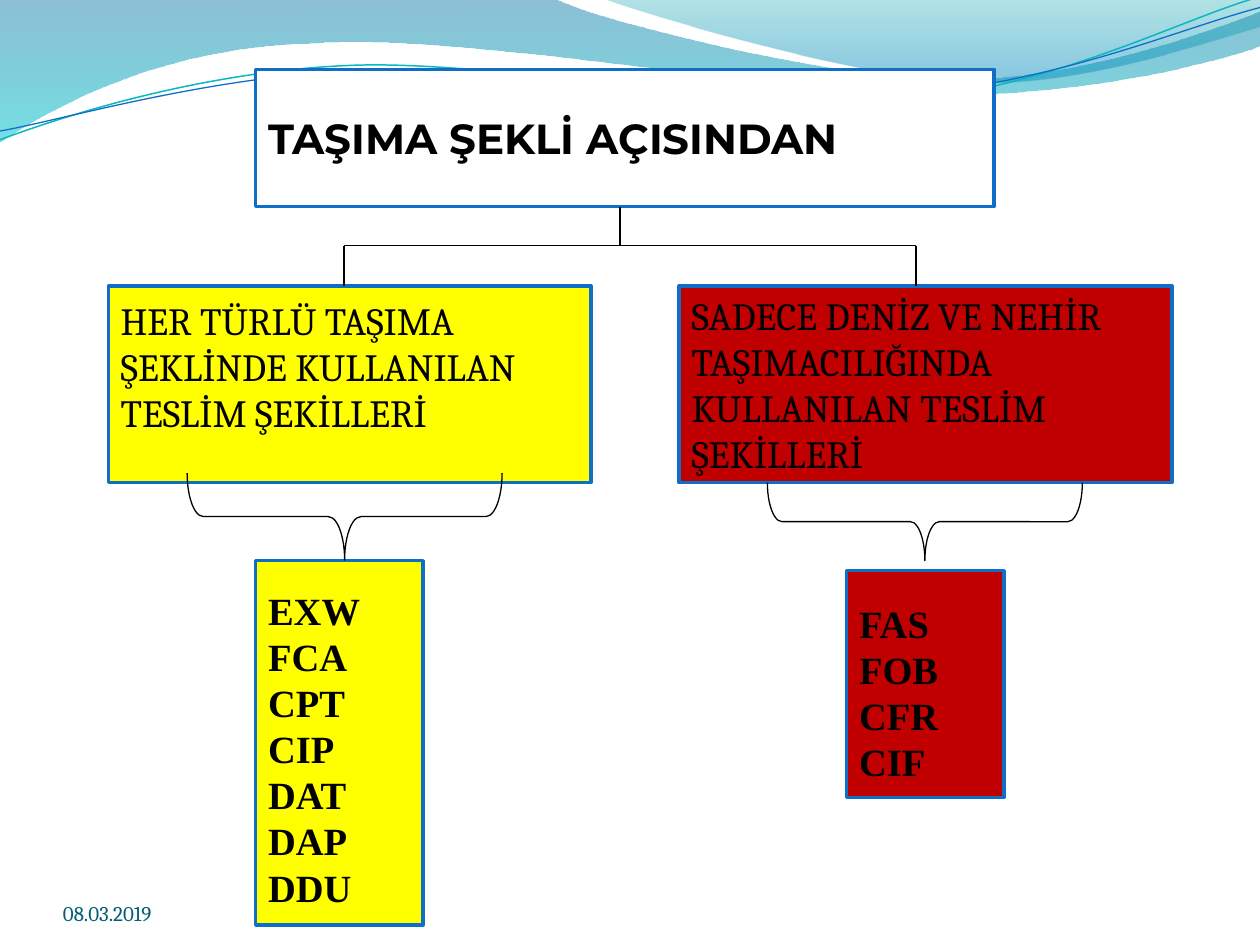
from dataclasses import dataclass

from lxml import etree
from pptx import Presentation
from pptx import util as u
from pptx.dml.color import RGBColor
from pptx.enum import shapes, text
from pptx.oxml import parse_xml
from pptx.oxml.ns import qn

COLS, ROWS = 100, 75  # grid of the slide, square cells
CELL = u.Inches(0.1)
NS = "http://schemas.openxmlformats.org/drawingml/2006/main"


@dataclass(frozen=True)
class Theme:
    ink: str = "000000"
    border: str = "0F6FC6"
    white: str = "FFFFFF"
    yellow: str = "FFFF00"
    red: str = "C00000"
    teal: str = "0AB8BF"
    date: str = "045D75"
    title_size: float = 24
    body_size: float = 22
    date_size: float = 12
    title_font: str = "Montserrat"
    body_font: str = "Cambria"
    code_font: str = "Times New Roman"
    border_width: float = 2
    hairline: float = 0.75


T = Theme()


@dataclass(frozen=True)
class Area:
    col: float
    row: float
    cols: float
    rows: float

    def emu(self) -> tuple:
        return tuple(cells(v) for v in (self.col, self.row, self.cols, self.rows))


@dataclass(frozen=True)
class Box:
    area: Area
    fill: str
    lines: tuple
    font: str
    size: float = T.body_size
    bold: bool = False
    top: float | None = None  # rows above the text; None centres it
    pitch: float | None = None  # line pitch in points


@dataclass(frozen=True)
class Wave:
    start: tuple
    curves: tuple  # each: two control points and an end point, or just an end point
    stops: tuple = ()  # position, colour, opacity in percent
    line: str = ""
    width: float = T.hairline


def cells(n: float) -> int:
    return round(n * CELL)


def write(tf, lines: tuple, *, font: str, size: float, color: str,
          bold: bool = False, pitch: float | None = None) -> None:
    tf.word_wrap = True
    for i, line in enumerate(lines):
        p = tf.add_paragraph() if i else tf.paragraphs[0]
        p.alignment = text.PP_ALIGN.LEFT
        if pitch:
            p.line_spacing = u.Pt(pitch)
        r = p.add_run()
        r.text = line
        r.font.name, r.font.size, r.font.bold = font, u.Pt(size), bold
        r.font.color.rgb = RGBColor.from_string(color)


def set_line(line, color: str, width: float) -> None:
    line.color.rgb = RGBColor.from_string(color)
    line.width = u.Pt(width)


def draw_box(sp, box: Box) -> None:
    s = sp.add_shape(shapes.MSO_SHAPE.RECTANGLE, *box.area.emu())
    s.shadow.inherit = False
    s.fill.solid()
    s.fill.fore_color.rgb = RGBColor.from_string(box.fill)
    set_line(s.line, T.border, T.border_width)
    tf = s.text_frame
    tf.vertical_anchor = text.MSO_ANCHOR.MIDDLE
    if box.top is not None:
        tf.vertical_anchor = text.MSO_ANCHOR.TOP
        tf.margin_top = cells(box.top)
    write(tf, box.lines, font=box.font, size=box.size, color=T.ink,
          bold=box.bold, pitch=box.pitch)


def draw_line(sp, x1: float, y1: float, x2: float, y2: float) -> None:
    c = sp.add_connector(shapes.MSO_CONNECTOR.STRAIGHT,
                         cells(x1), cells(y1), cells(x2), cells(y2))
    set_line(c.line, T.ink, T.hairline)
    etree.SubElement(c._element.spPr, qn("a:effectLst"))


def draw_brace(sp, area: Area, bend: float) -> None:
    s = sp.add_shape(shapes.MSO_SHAPE.RIGHT_BRACE, *area.emu())
    s.rotation = 90
    s.adjustments[0], s.adjustments[1] = bend, 0.5
    s.shadow.inherit = False
    s.fill.background()
    set_line(s.line, T.ink, T.hairline)


def bend_segments(spPr, curves: tuple) -> None:
    """Join each three straight segments of a curve into one cubic segment."""
    segments = iter(list(spPr.iter(qn("a:lnTo"))))
    for curve in curves:
        parts = [next(segments) for _ in curve]
        if len(parts) == 3:
            cubic = etree.Element(qn("a:cubicBezTo"))
            parts[0].addprevious(cubic)
            for part in parts:
                cubic.append(part[0])
                part.getparent().remove(part)


def draw_wave(sp, wave: Wave) -> None:
    points = [(cells(x), cells(y)) for curve in wave.curves for x, y in curve]
    fb = sp.build_freeform(*map(cells, wave.start))
    fb.add_line_segments(points, close=bool(wave.stops))
    s = fb.convert_to_shape()
    spPr = s._element.spPr
    bend_segments(spPr, wave.curves)
    s.shadow.inherit = False
    if wave.line:
        s.fill.background()
        set_line(s.line, wave.line, wave.width)
        return
    s.line.fill.background()
    s.fill.gradient()
    stops = "".join(
        f'<a:gs pos="{pos * 1000}"><a:srgbClr val="{color}">'
        f'<a:alpha val="{alpha * 1000}"/></a:srgbClr></a:gs>'
        for pos, color, alpha in wave.stops)
    spPr.replace(spPr.find(qn("a:gradFill")), parse_xml(
        f'<a:gradFill xmlns:a="{NS}" rotWithShape="1"><a:gsLst>{stops}</a:gsLst>'
        '<a:lin ang="5400000" scaled="0"/></a:gradFill>'))


WAVES = (
    Wave((0, 0), (((44, -0.1),),
                  ((47.6, 1.7), (66.4, 6.3), (75.8, 6.3)),
                  ((85.3, 6.3), (95.8, 2.6), (100, 0.9)),
                  ((100.1, 3.6),),
                  ((98.3, 4.4), (87, 7.6), (74.6, 7.5)),
                  ((62.2, 7.5), (38.2, 2.8), (25.7, 3.4)),
                  ((12.9, 3.6), (4.6, 8.3), (-0.1, 11.3))),
         stops=((0, "0074A1", 45), (100, "00C6CF", 55))),
    Wave((47.9, -0.1), (((50.9, 1.1), (68.2, 6.2), (76.9, 6.5)),
                        ((85.6, 6.9), (96.1, 3.2), (100, 2.1)),
                        ((100, 0),)),
         stops=((0, "00A1A9", 30), (80, "008BBF", 45))),
    Wave((0, 11.1), (((4.8, 9.3), (15.8, 5.7), (27.7, 5.2)),
                     ((39.5, 4.7), (59.3, 8.9), (71.3, 8)),
                     ((83.3, 7.1), (93.8, 1.5), (99.8, -0.2))),
         line=T.teal, width=0.85),
    Wave((0, 10.4), (((4.7, 9.6), (16.4, 6.1), (28.3, 5.6)),
                     ((40.3, 5.1), (59.7, 8.4), (71.7, 7.5)),
                     ((83.6, 6.7), (94.1, 2.1), (100, 0.6))),
         line=T.border),
)
BOXES = (
    Box(Area(20.3, 5.5, 58.6, 10.9), T.white, ("TAŞIMA ŞEKLİ AÇISINDAN",),
        T.title_font, T.title_size, bold=True),
    Box(Area(8.6, 22.7, 38.3, 15.6), T.yellow,
        ("HER TÜRLÜ TAŞIMA ŞEKLİNDE KULLANILAN TESLİM ŞEKİLLERİ",), T.body_font, top=0.85),
    Box(Area(53.9, 22.7, 39.1, 15.6), T.red,
        ("SADECE DENİZ VE NEHİR TAŞIMACILIĞINDA KULLANILAN TESLİM ŞEKİLLERİ",), T.body_font),
    Box(Area(20.3, 44.5, 13.3, 28.9), T.yellow,
        ("EXW", "FCA", "CPT", "CIP", "DAT", "DAP", "DDU"),
        T.code_font, bold=True, top=2.05, pitch=26.4),
    Box(Area(67.2, 45.3, 12.5, 18), T.red, ("FAS", "FOB", "CFR", "CIF"),
        T.code_font, bold=True, top=2.3, pitch=26.4),
)
STEM, LEFT, RIGHT = 49.2, 27.3, 72.7  # columns of the tree's lines
TITLE_END, BRANCH, BOX_TOP = 16.4, 19.5, 22.7  # rows of the tree's lines


def main() -> None:
    prs = Presentation()
    prs.slide_width, prs.slide_height = cells(COLS), cells(ROWS)
    sp = prs.slides.add_slide(prs.slide_layouts[6]).shapes

    # Wavy header
    for wave in WAVES:
        draw_wave(sp, wave)

    # Boxes and the tree between them
    for box in BOXES:
        draw_box(sp, box)
    draw_line(sp, STEM, TITLE_END, STEM, BRANCH)
    draw_line(sp, RIGHT, BRANCH, LEFT, BRANCH)
    for col in (LEFT, RIGHT):
        draw_line(sp, col, BRANCH, col, BOX_TOP)

    # Braces down to the term lists
    draw_brace(sp, Area(23.9, 28.5, 6.9, 25), 0.187)
    draw_brace(sp, Area(70.3, 28.9, 6.2, 25), 0.186)

    # Date
    tf = sp.add_textbox(*Area(5, 69.5, 23.3, 4).emu()).text_frame
    tf.margin_left = tf.margin_right = tf.margin_top = tf.margin_bottom = 0
    tf.vertical_anchor = text.MSO_ANCHOR.BOTTOM
    write(tf, ("08.03.2019",), font=T.body_font, size=T.date_size, color=T.date)

    prs.save("out.pptx")


if __name__ == "__main__":
    main()
